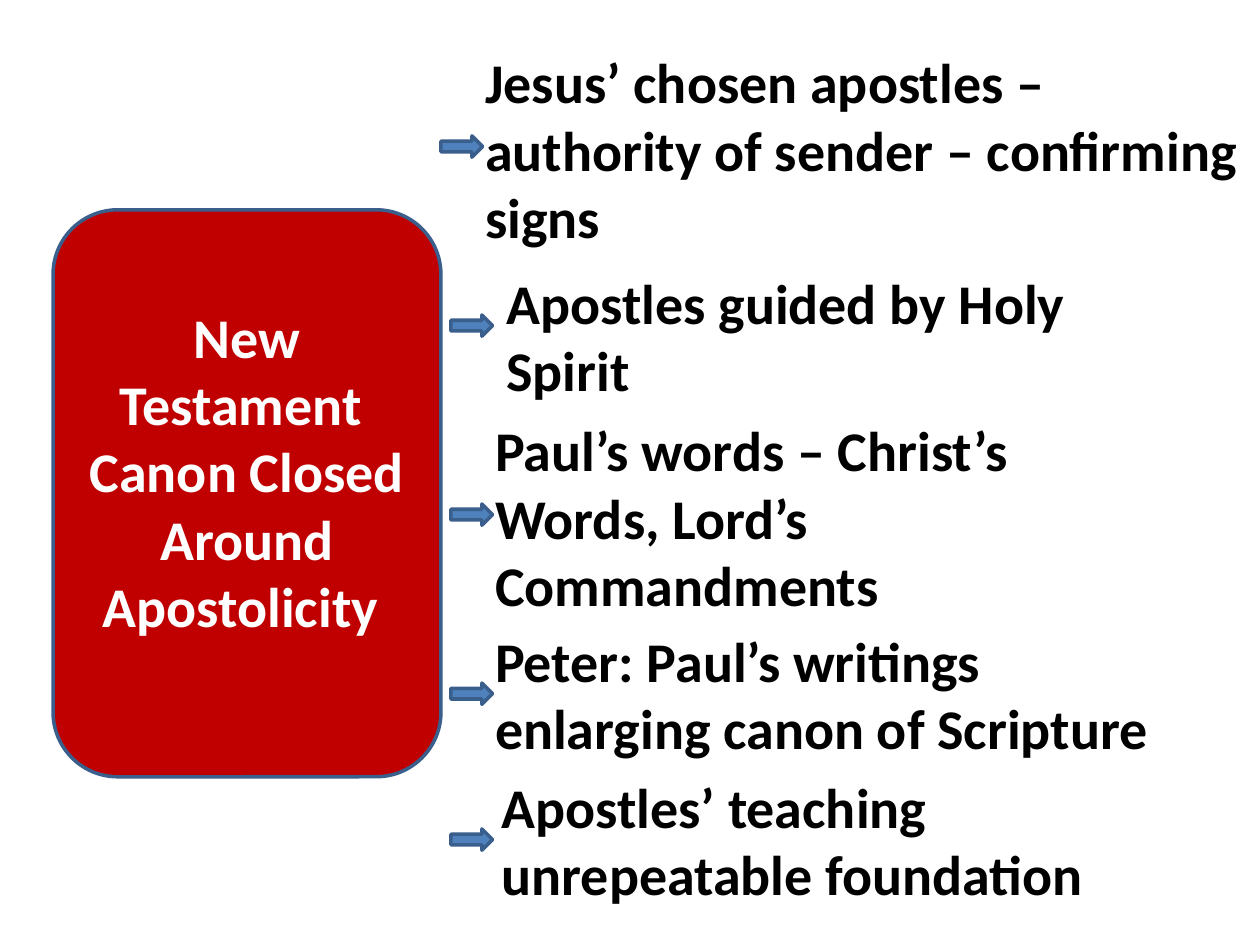
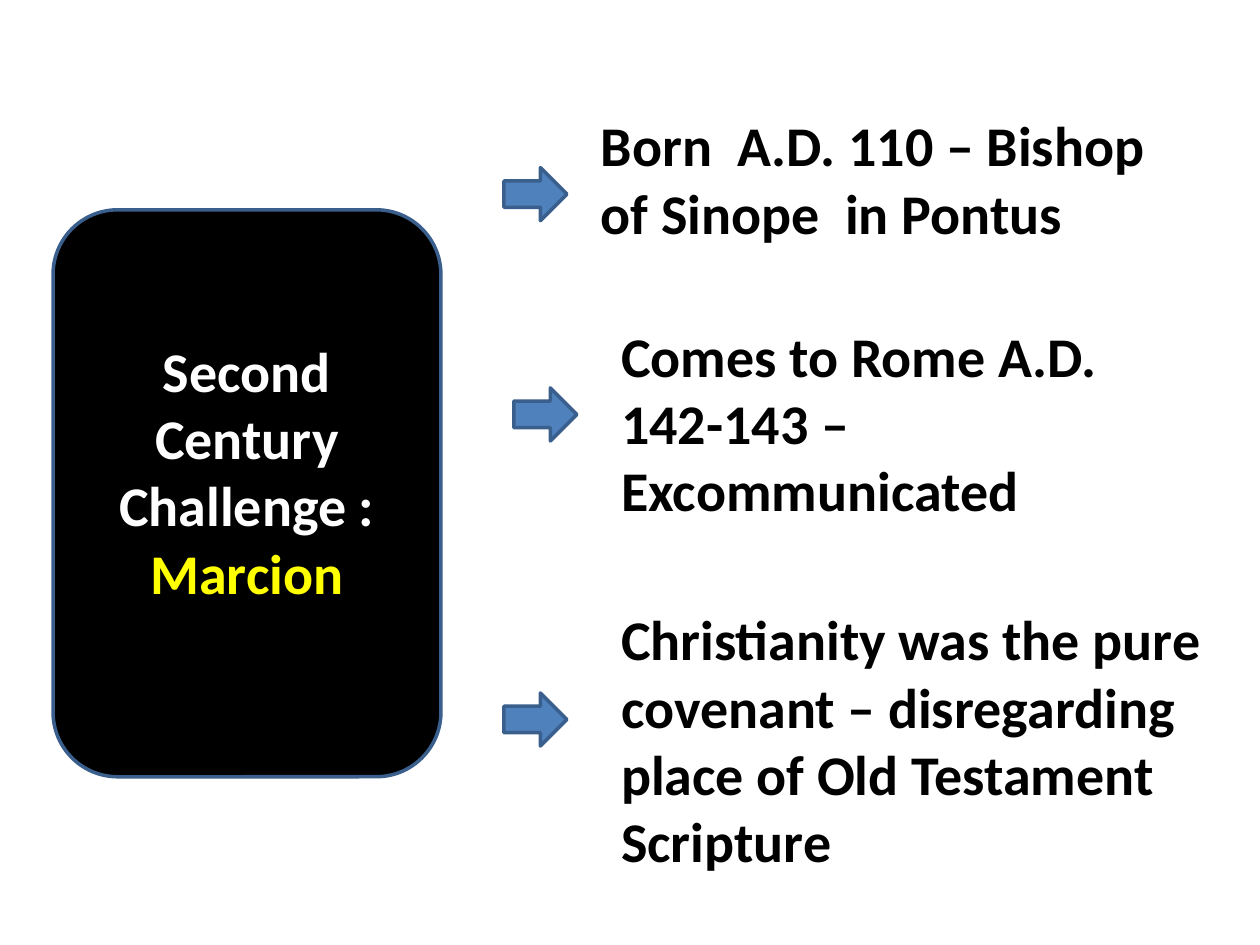
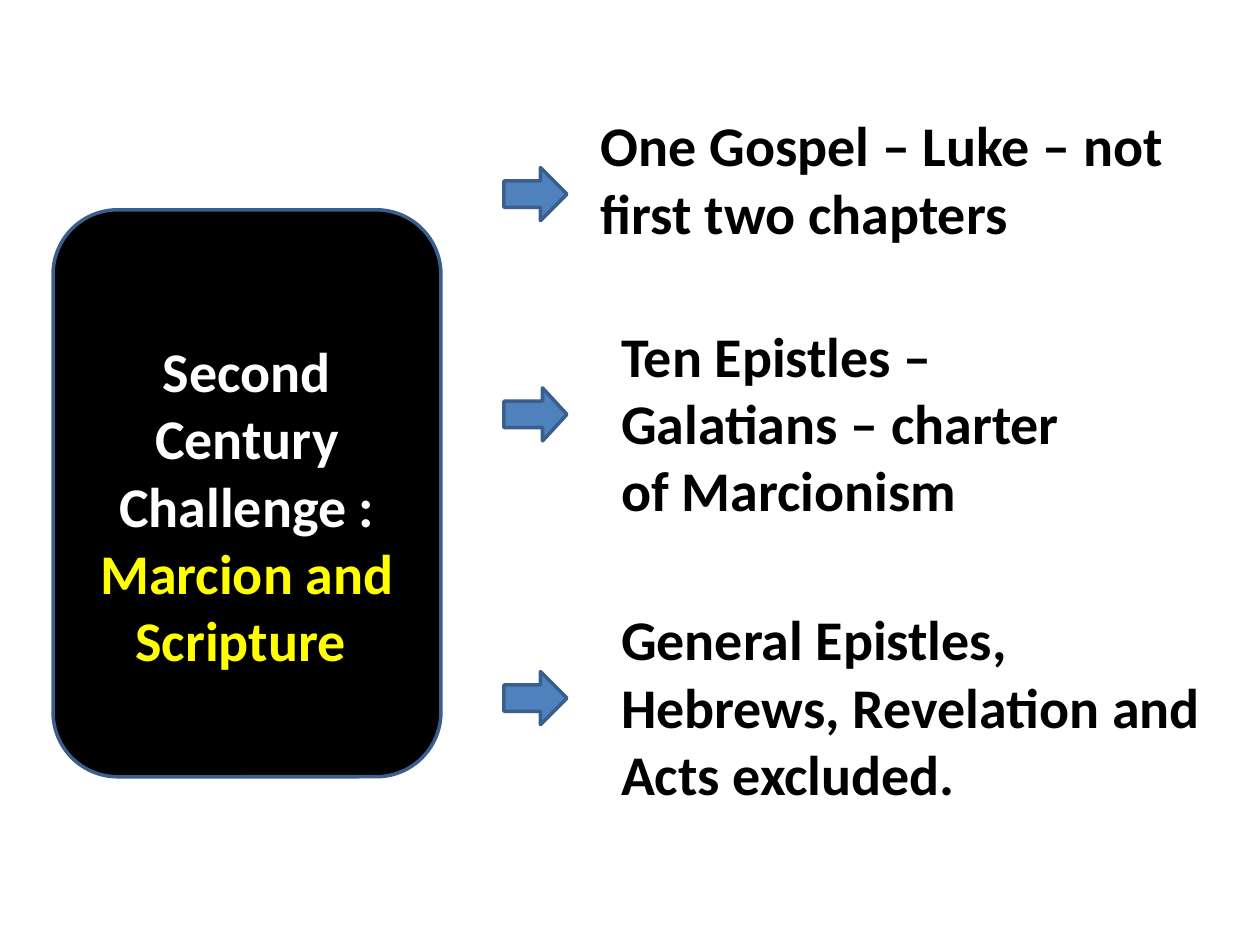
from dataclasses import dataclass

from pptx import Presentation
from pptx.dml.color import RGBColor
from pptx.enum.shapes import MSO_SHAPE
from pptx.enum.text import MSO_AUTO_SIZE, PP_ALIGN
from pptx.util import Cm, Pt


@dataclass(frozen=True)
class Theme:
    """Colours, type and line sizes shared by the slides."""
    font: str = "Calibri"
    size: int = 32
    line_width: int = 2
    line_height: float = 1.365
    text_padding: float = 0.27
    ink: str = "000000"
    light: str = "FFFFFF"
    accent: str = "FFFF00"
    red: str = "C00000"
    black: str = "000000"
    arrow: str = "4F81BD"
    outline: str = "3A5F8C"


@dataclass(frozen=True)
class Box:
    """A region in centimetres."""
    left: float
    top: float
    width: float
    height: float

    def inner(self, dx, dy, width, height):
        """Return a box placed relative to this one."""
        return Box(self.left + dx, self.top + dy, width, height)

    def emu(self):
        """Return the four lengths for a shape call."""
        return [Cm(v) for v in (self.left, self.top, self.width, self.height)]


@dataclass(frozen=True)
class Point:
    """One statement and its arrow, relative to the list of points."""
    text: str
    lines: int
    dx: float
    dy: float
    width: float
    arrow_dx: float
    arrow_dy: float
    arrow_head: float = 0.5


THEME = Theme()
PANEL = Box(1.07, 4.23, 7.82, 11.43)
APOSTOLICITY_LIST = Box(8.89, 0.84, 16.51, 17.6)
MARCION_LIST = Box(10.16, 2.11, 14.61, 15.7)
SMALL_ARROW = (0.84, 0.43)
LARGE_ARROW = (1.27, 1.07)

APOSTOLICITY_POINTS = [
    Point("Jesus’ chosen apostles – authority of sender – confirming signs",
          3, 0.64, 0, 15.88, 0, 1.9),
    Point("Apostles guided by Holy Spirit", 2, 1.07, 4.44, 12.07, 0.2, 5.51),
    Point("Paul’s words – Christ’s Words, Lord’s Commandments",
          3, 0.84, 7.42, 12.7, 0.2, 9.32),
    Point("Peter: Paul’s writings enlarging canon of Scripture",
          2, 0.84, 11.66, 14.4, 0.2, 12.93),
    Point("Apostles’ teaching unrepeatable foundation",
          2, 0.97, 14.6, 14.17, 0.2, 15.87),
]
MARCION_POINTS = [
    Point("Born  A.D. 110 – Bishop of Sinope  in Pontus",
          2, 1.7, 0, 11.86, 0, 1.27),
    Point("Comes to Rome A.D. 142-143 – Excommunicated",
          3, 2.11, 4.24, 10.16, 0.2, 5.71),
    Point("Christianity was the pure covenant – disregarding place of "
          "Old Testament Scripture", 4, 2.11, 9.96, 12.5, 0, 11.86),
]
SCRIPTURE_POINTS = [
    Point("One Gospel – Luke – not first two chapters",
          2, 1.7, 0, 11.86, 0, 1.27),
    Point("Ten Epistles – Galatians – charter of Marcionism",
          3, 2.11, 4.24, 10.16, 0, 5.71, 0.46),
    Point("General Epistles, Hebrews, Revelation and Acts excluded.",
          3, 2.11, 9.96, 12.5, 0, 11.43),
]


def text_height(lines):
    """Return the height of a text box with this many lines."""
    return THEME.text_padding + lines * THEME.line_height


def add_outlined(s, kind, box, fill):
    """Add a filled shape with the shared outline."""
    sp = s.shapes.add_shape(kind, *box.emu())
    sp.shadow.inherit = False
    sp.fill.solid()
    sp.fill.fore_color.rgb = RGBColor.from_string(fill)
    sp.line.color.rgb = RGBColor.from_string(THEME.outline)
    sp.line.width = Pt(THEME.line_width)
    return sp


def add_text(s, box, text, color, accent="", align=PP_ALIGN.LEFT):
    """Add bold wrapped text, with an optional accented ending."""
    tf = s.shapes.add_textbox(*box.emu()).text_frame
    tf.word_wrap = True
    tf.auto_size = MSO_AUTO_SIZE.SHAPE_TO_FIT_TEXT
    p = tf.paragraphs[0]
    p.text = text
    p.alignment = align
    if accent:
        p.add_run().text = accent
    for r, shade in zip(p.runs, (color, THEME.accent)):
        r.font.name = THEME.font
        r.font.size = Pt(THEME.size)
        r.font.bold = True
        r.font.color.rgb = RGBColor.from_string(shade)


def add_panel(s, box, fill, label_dy, lines, lead, accent=""):
    """Add the rounded topic panel and its centred label."""
    add_outlined(s, MSO_SHAPE.ROUNDED_RECTANGLE, box, fill)
    margin = 0.41
    label = box.inner(margin, label_dy, box.width - 2 * margin, text_height(lines))
    add_text(s, label, lead, THEME.light, accent, PP_ALIGN.CENTER)


def add_points(s, box, points, arrow_size):
    """Add the statements, then the arrows that lead to them."""
    for point in points:
        place = box.inner(point.dx, point.dy, point.width, text_height(point.lines))
        add_text(s, place, point.text, THEME.ink)
    for point in points:
        place = box.inner(point.arrow_dx, point.arrow_dy, *arrow_size)
        sp = add_outlined(s, MSO_SHAPE.RIGHT_ARROW, place, THEME.arrow)
        sp.adjustments[1] = point.arrow_head


def add_blank(prs):
    """Add a slide on the blank layout."""
    return prs.slides.add_slide(prs.slide_layouts[6])


def add_apostolicity_slide(prs):
    """Build the slide on the closing of the canon."""
    s = add_blank(prs)
    add_panel(s, PANEL, THEME.red, 1.74, 5,
              "New Testament  Canon Closed Around Apostolicity ")
    add_points(s, APOSTOLICITY_LIST, APOSTOLICITY_POINTS, SMALL_ARROW)


def add_marcion_slide(prs, topic, lines, points):
    """Build a slide on the second century challenge."""
    s = add_blank(prs)
    add_panel(s, PANEL, THEME.black, 2.43, lines,
              "Second Century Challenge : ", topic)
    add_points(s, MARCION_LIST, points, LARGE_ARROW)


def main():
    """Build and save the presentation."""
    prs = Presentation()
    prs.slide_width, prs.slide_height = Cm(25.4), Cm(19.05)
    add_apostolicity_slide(prs)
    add_marcion_slide(prs, "Marcion", 4, MARCION_POINTS)
    add_marcion_slide(prs, "Marcion and Scripture ", 5, SCRIPTURE_POINTS)
    prs.save("out.pptx")


if __name__ == "__main__":
    main()
